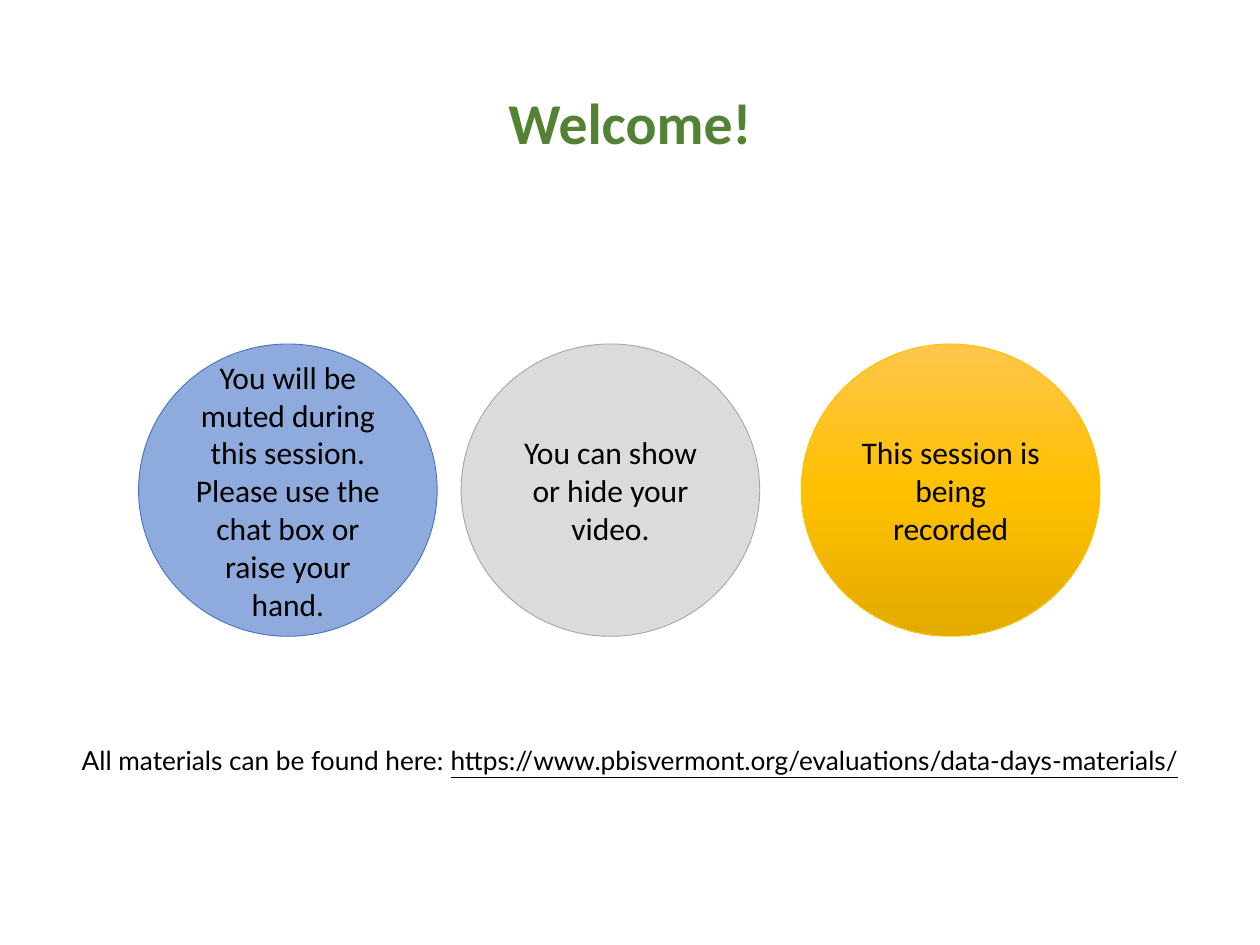
import copy

import pptx
import pptx.dml.color
import pptx.enum.shapes
import pptx.enum.text
import pptx.oxml.ns
import pptx.util

Inches = pptx.util.Inches
Pt = pptx.util.Pt
RGBColor = pptx.dml.color.RGBColor

BLACK = RGBColor(0x00, 0x00, 0x00)
GREEN = RGBColor(0x54, 0x82, 0x35)
BLUE = RGBColor(0x44, 0x72, 0xC4)
LIGHT_BLUE = RGBColor(0x8F, 0xAA, 0xDC)
GRAY = RGBColor(0xA5, 0xA5, 0xA5)
LIGHT_GRAY = RGBColor(0xDB, 0xDB, 0xDB)
GOLD = RGBColor(0xFF, 0xC0, 0x00)
LIGHT_GOLD = RGBColor(0xFF, 0xC6, 0x4B)
DARK_GOLD = RGBColor(0xE3, 0xAB, 0x00)

CIRCLE_TOP, CIRCLE_WIDTH, CIRCLE_HEIGHT = 2.73, 2.37, 2.32
LABEL_WIDTH = 1.71

# left, label height, fill colours from top to bottom, line, label
CIRCLES = [
    (1.1, 2.22, [LIGHT_BLUE], BLUE,
     "You will be muted during this session. "
     "Please use the chat box or raise your hand."),
    (3.66, 1.01, [LIGHT_GRAY], GRAY, "You can show or hide your video."),
    (6.36, 1.01, [LIGHT_GOLD, GOLD, DARK_GOLD], GOLD,
     "This session is being recorded"),
]


class WelcomeSlide:
    def __init__(self, deck):
        self.page = deck.slides.add_slide(deck.slide_layouts[5])

    def set_text(self, box, spans, font, size, color=BLACK, bold=False):
        """Fill a box with one centred paragraph of (text, underlined) spans."""
        frame = box.text_frame
        frame.word_wrap = True
        frame.vertical_anchor = pptx.enum.text.MSO_ANCHOR.MIDDLE
        para = frame.paragraphs[0]
        para.alignment = pptx.enum.text.PP_ALIGN.CENTER
        para.font.name = font
        para.font.size = Pt(size)
        para.font.bold = bold
        para.font.color.rgb = color
        for text, underlined in spans:
            span = para.add_run()
            span.text = text
            if underlined:
                span.font.underline = True

    def title(self, text):
        box = self.page.shapes.title
        box.left, box.top = Inches(0), Inches(0.63)
        box.width, box.height = Inches(10), Inches(0.66)
        self.set_text(box, [(text, False)], "Calibri", 33, GREEN, bold=True)

    def text(self, left, top, width, height, spans, font, size):
        box = self.page.shapes.add_textbox(
            Inches(left), Inches(top), Inches(width), Inches(height))
        self.set_text(box, spans, font, size)

    def gradient(self, shape, colors):
        """Apply an evenly spaced gradient running from top to bottom."""
        shape.fill.gradient()
        shape.fill.gradient_angle = 270
        stop_list = shape._element.spPr.find(
            ".//" + pptx.oxml.ns.qn("a:gsLst"))
        while len(stop_list) < len(colors):
            stop_list.append(copy.deepcopy(stop_list[0]))
        for index, (stop, color) in enumerate(
                zip(shape.fill.gradient_stops, colors)):
            stop.position = index / (len(colors) - 1)
            stop.color.rgb = color

    def circle(self, left, label_height, colors, line, label):
        shape = self.page.shapes.add_shape(
            pptx.enum.shapes.MSO_SHAPE.OVAL, Inches(left), Inches(CIRCLE_TOP),
            Inches(CIRCLE_WIDTH), Inches(CIRCLE_HEIGHT))
        shape.shadow.inherit = False
        if len(colors) > 1:
            self.gradient(shape, colors)
        else:
            shape.fill.solid()
            shape.fill.fore_color.rgb = colors[0]
        shape.line.color.rgb = line
        shape.line.width = Pt(0.5)
        self.text(left + (CIRCLE_WIDTH - LABEL_WIDTH) / 2,
                  CIRCLE_TOP + (CIRCLE_HEIGHT - label_height) / 2,
                  LABEL_WIDTH, label_height, [(label, False)], "Calibri", 18)


def main():
    deck = pptx.Presentation()
    deck.slide_width, deck.slide_height = Inches(10), Inches(7.5)
    slide = WelcomeSlide(deck)
    slide.title("Welcome!")
    for circle in CIRCLES:
        slide.circle(*circle)
    slide.text(0, 5.86, 10, 0.35, [
        ("All materials can be found here: ", False),
        ("https://www.pbisvermont.org/evaluations/data-days-materials/", True),
    ], "Lato", 15)
    deck.save("out.pptx")


if __name__ == "__main__":
    main()
